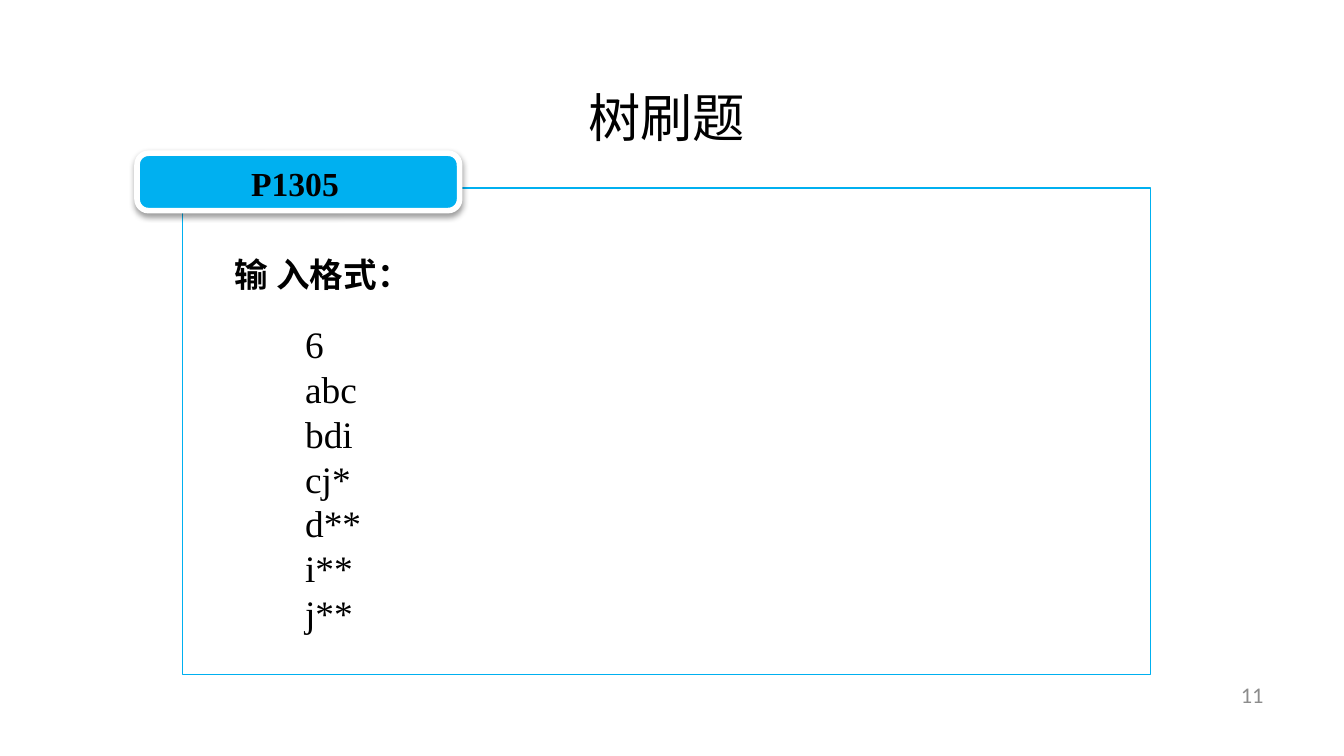
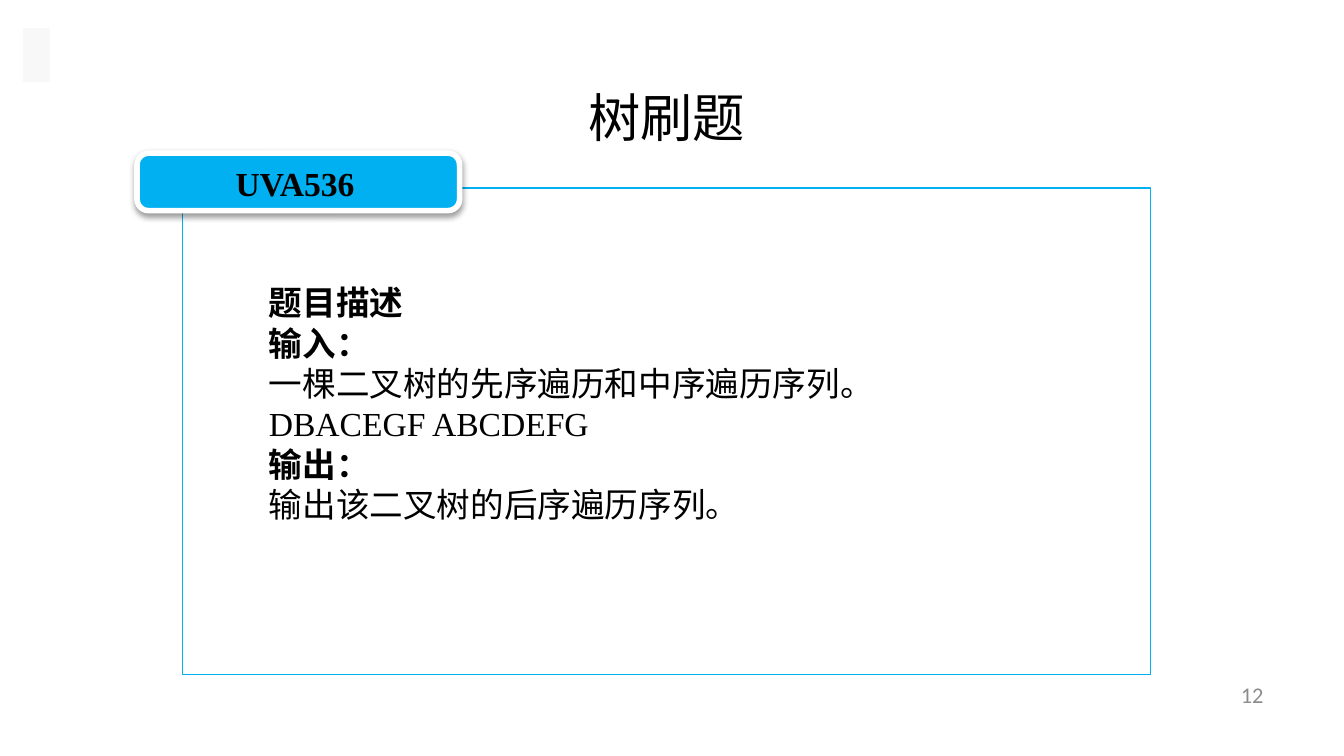
"""Build two slides of binary tree exercises."""
from lxml.etree import SubElement
from pptx import Presentation
from pptx.dml.color import RGBColor
from pptx.enum.shapes import MSO_SHAPE as Shape
from pptx.enum.text import MSO_ANCHOR as Anchor, MSO_AUTO_SIZE as AutoSize, PP_ALIGN as Align
from pptx.oxml.ns import qn
from pptx.util import Inches, Pt

SERIF, SANS, CJK = "Times New Roman", "Calibri", "Noto Sans CJK SC"
BLACK, WHITE, BLUE, GREY, PALE = "000000", "FFFFFF", "00B0F0", "8C8C8C", "F8F8F8"
TITLE = "树刷题"
FIRST_NUMBER = 11

EXERCISES = [
    {
        "label": "P1305",
        "heading": "输 入格式：",
        "lines": [(line, SERIF, False)
                  for line in ("6", "abc", "bdi", "cj*", "d**", "i**", "j**")],
        "size": 20, "area": (21.7, 41.6, 50, 43.73),
        "align": Align.LEFT, "indent": 0,
    },
    {
        "label": "UVA536",
        "lines": [
            ("题目描述", SERIF, True),
            ("输入：", SERIF, True),
            ("一棵二叉树的先序遍历和中序遍历序列。", SANS, False),
            ("DBACEGF ABCDEFG", SERIF, False),
            ("输出：", SERIF, True),
            ("输出该二叉树的后序遍历序列。", SANS, False),
        ],
        "size": 18, "area": (16.1, 36.44, 66.1, 39.47),
        "align": Align.JUSTIFY, "indent": 0.29,
        "corner": (1.7, 3.73, 2, 7.11),
    },
]

TITLE_AREA = (33.1, 7.47, 33, 11.91)
FRAME_AREA = (13.6, 24.89, 72, 64.36)
BANNER_AREA = (10.2, 20.27, 24, 7.6)
LABEL_AREA = (10.4, 20.62, 23.1, 7.11)
HEADING_AREA = (16.5, 32.71, 66.1, 12.62)
NUMBER_AREA = (71.7, 89.24, 23.3, 5.33)

deck = Presentation()
deck.slide_width, deck.slide_height = Inches(10), Inches(5.625)


def rgb(code):
    return RGBColor.from_string(code)


def place(area):
    """Turn percentages of the slide into lengths."""
    sides = (deck.slide_width, deck.slide_height) * 2
    return [round(side * share / 100) for side, share in zip(sides, area)]


def write(holder, lines, size, color=BLACK, align=Align.LEFT, spacing=None,
          indent=0, anchor=Anchor.TOP):
    """Fill a text holder with (text, font, bold) lines."""
    frame = holder.text_frame
    frame.word_wrap = True
    frame.auto_size = AutoSize.NONE
    frame.vertical_anchor = anchor
    frame.text = "\n".join(text for text, _, _ in lines)
    for paragraph, (_, face, bold) in zip(frame.paragraphs, lines):
        paragraph.alignment = align
        paragraph.space_before = Pt(0)
        paragraph.line_spacing = spacing or Pt(size * 1.2)
        properties = paragraph._p.get_or_add_pPr()
        properties.set("marL", "0")
        properties.set("indent", str(Inches(indent)))
        SubElement(properties, qn("a:buNone"))
        font = paragraph.font
        font.name, font.size, font.bold = face, Pt(size), bold
        font.color.rgb = rgb(color)
        east_asian = SubElement(font._element, qn("a:ea"))
        east_asian.set("typeface", CJK)


def move(holder, area):
    holder.left, holder.top, holder.width, holder.height = place(area)


def add_text(slide, area, text, face, size, bold=False, **style):
    write(slide.shapes.add_textbox(*place(area)), [(text, face, bold)], size, **style)


def add_panel(slide, kind, area, fill, line=None, width=0):
    panel = slide.shapes.add_shape(kind, *place(area))
    panel.shadow.inherit = False
    panel.fill.solid()
    panel.fill.fore_color.rgb = rgb(fill)
    if line:
        panel.line.color.rgb = rgb(line)
        panel.line.width = Pt(width)
    else:
        panel.line.fill.background()
    return panel


def set_alpha(color_node, percent):
    SubElement(color_node, qn("a:alpha")).set("val", str(percent * 1000))


def add_shadow(panel):
    """Cast a soft black shadow straight down."""
    effects = panel._element.spPr.find(qn("a:effectLst"))
    shadow = SubElement(effects, qn("a:outerShdw"), blurRad=str(Pt(3.1)),
                        dist=str(Pt(1.6)), dir="5400000", rotWithShape="0")
    set_alpha(SubElement(shadow, qn("a:srgbClr"), val=BLACK), 38)


def build_exercise(number, exercise):
    slide = deck.slides.add_slide(deck.slide_layouts[1])
    title, body = slide.shapes.title, slide.placeholders[1]
    move(title, TITLE_AREA)
    write(title, [(TITLE, CJK, False)], 28, align=Align.CENTER, spacing=1.35)
    add_text(slide, NUMBER_AREA, str(number), SANS, 12, color=GREY,
             align=Align.RIGHT, anchor=Anchor.MIDDLE)

    frame = add_panel(slide, Shape.RECTANGLE, FRAME_AREA, WHITE, BLUE, 0.75)
    set_alpha(frame._element.spPr.find(qn("a:solidFill"))[0], 90)
    banner = add_panel(slide, Shape.ROUNDED_RECTANGLE, BANNER_AREA, BLUE, WHITE, 3)
    banner.adjustments[0] = 0.2
    add_shadow(banner)
    add_text(slide, LABEL_AREA, exercise["label"], SERIF, 18, bold=True,
             align=Align.CENTER)
    if "heading" in exercise:
        add_text(slide, HEADING_AREA, exercise["heading"], SANS, 18, bold=True)

    move(body, exercise["area"])
    write(body, exercise["lines"], exercise["size"], align=exercise["align"],
          indent=exercise["indent"])
    slide.shapes._spTree.append(body._element)
    if "corner" in exercise:
        add_panel(slide, Shape.RECTANGLE, exercise["corner"], PALE)


for number, exercise in enumerate(EXERCISES, FIRST_NUMBER):
    build_exercise(number, exercise)
deck.save("out.pptx")
